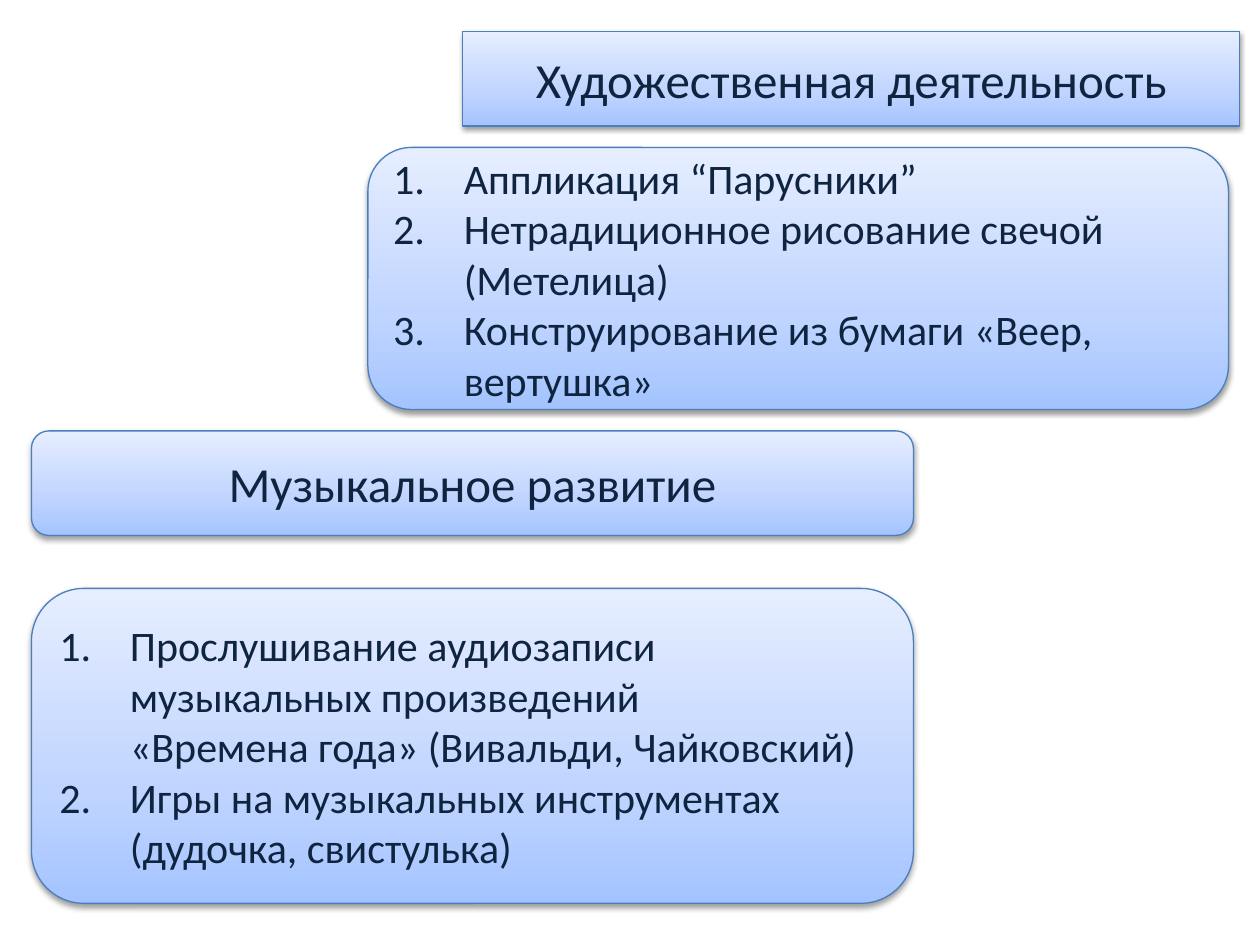
from dataclasses import dataclass

from lxml import etree
from pptx import Presentation
from pptx import util as u
from pptx.dml import color
from pptx.enum import text
from pptx.oxml import ns


@dataclass
class Theme:
    font: str = "Calibri"
    ink: str = "0F243E"
    edge: str = "4B7EBC"
    shade: str = "000000"
    stops: tuple = ((0, "A4C4FF"), (35, "BFD4FF"), (100, "E6EEFF"))
    heading: int = 28
    item: int = 24


theme = Theme()


def add_xml(parent, xml):
    head, tail = xml.split(">", 1) if not xml.endswith("/>") or xml.count("<") > 1 else (xml[:-2], "/>")
    close = tail if tail == "/>" else ">" + tail
    parent.append(etree.fromstring(f"{head} {ns.nsdecls('a')}{close}"))


def write(tf, txt, first=False, size=theme.item, align=text.PP_ALIGN.LEFT, numbered=False):
    p = tf.paragraphs[0] if first else tf.add_paragraph()
    p.text = txt
    p.alignment = align
    p.space_before = u.Pt(0)
    if numbered:
        pPr = p._p.get_or_add_pPr()
        pPr.set("marL", str(u.Inches(0.56)))
        pPr.set("indent", str(-u.Inches(0.56)))
        add_xml(pPr, f'<a:buFont typeface="{theme.font}"/>')
        add_xml(pPr, '<a:buAutoNum type="arabicPeriod"/>')
    for r in p.runs:
        r.font.name = theme.font
        r.font.size = u.Pt(size)
        r.font.bold = False
        r.font.color.rgb = color.RGBColor.from_string(theme.ink)


prs = Presentation()
prs.slide_width, prs.slide_height = u.Inches(10), u.Inches(7.5)
s = prs.slides.add_slide(prs.slide_layouts.get_by_name("Comparison"))
holders = {sp.placeholder_format.idx: sp for sp in s.placeholders}
unused = holders[1]._element
unused.getparent().remove(unused)

heading = dict(size=theme.heading, align=text.PP_ALIGN.CENTER)
listing = dict(numbered=True)
panels = [
    (0, (3.67, 0.25, 6.17, 0.75), heading, ["Художественная деятельность"]),
    (2, (2.92, 1.17, 6.83, 2.08), listing, [
        "Аппликация “Парусники”",
        "Нетрадиционное рисование свечой (Метелица)",
        "Конструирование из бумаги «Веер, вертушка»",
    ]),
    (3, (0.25, 3.42, 7, 0.83), heading, ["Музыкальное развитие"]),
    (4, (0.25, 4.67, 7, 2.5), listing, [
        "Прослушивание аудиозаписи музыкальных произведений\v«Времена года» (Вивальди, Чайковский)",
        "Игры на музыкальных инструментах (дудочка, свистулька)",
    ]),
]

stops = "".join(
    f'<a:gs pos="{pos * 1000}"><a:srgbClr val="{rgb}"/></a:gs>' for pos, rgb in theme.stops
)
for idx, box, style, lines in panels:
    sp = holders[idx]
    sp.left, sp.top, sp.width, sp.height = map(u.Inches, box)
    spPr = sp._element.spPr
    add_xml(spPr, '<a:prstGeom prst="roundRect"><a:avLst/></a:prstGeom>')
    add_xml(spPr, f'<a:gradFill rotWithShape="1"><a:gsLst>{stops}</a:gsLst>'
                  '<a:lin ang="16200000" scaled="0"/></a:gradFill>')
    sp.line.width = u.Pt(0.75)
    sp.line.color.rgb = color.RGBColor.from_string(theme.edge)
    sp.shadow.inherit = False
    add_xml(spPr.find(ns.qn("a:effectLst")),
            f'<a:outerShdw blurRad="{u.Pt(3.1)}" dist="{u.Pt(1.6)}" dir="5400000" rotWithShape="0">'
            f'<a:srgbClr val="{theme.shade}"><a:alpha val="38000"/></a:srgbClr></a:outerShdw>')

    tf = sp.text_frame
    tf.word_wrap = True
    tf.auto_size = text.MSO_AUTO_SIZE.NONE
    tf.vertical_anchor = text.MSO_ANCHOR.MIDDLE
    for i, line in enumerate(lines):
        write(tf, line, first=i == 0, **style)

prs.save("out.pptx")
